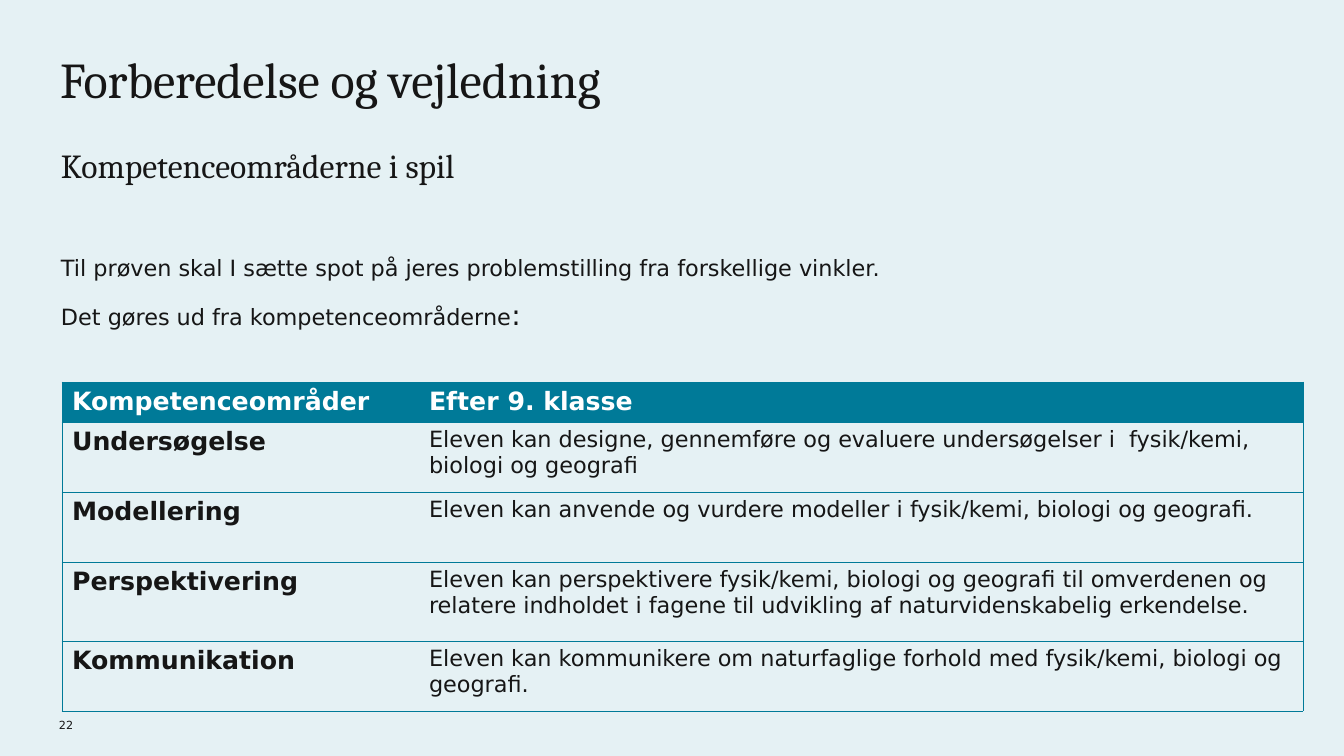
"""Build the slide on preparation and guidance with its table of competence areas."""
from lxml import etree
from pptx import Presentation
from pptx.dml.color import RGBColor
from pptx.enum.text import MSO_ANCHOR, MSO_AUTO_SIZE
from pptx.oxml.ns import qn
from pptx.util import Emu, Pt

TOP, LOW = MSO_ANCHOR.TOP, MSO_ANCHOR.BOTTOM
FIXED = MSO_AUTO_SIZE.NONE
PX = 9071
INK, TEAL, WHITE, PALE = "161616", "007A98", "FFFFFF", "E5F1F4"
SERIF, SANS = "Cambria", "DejaVu Sans"
PLAIN = "{2D5ABB26-0587-4C30-8999-92F81FD0307C}"


def add_run(para, text, size, face=SANS, color=INK, bold=False):
    run = para.add_run()
    run.text = text
    font = run.font
    font.size, font.name, font.bold = Pt(size), face, bold
    font.color.rgb = RGBColor.from_string(color)


def set_box(shape, left, top, width, height, anchor=TOP):
    shape.left, shape.top = Emu(left * PX), Emu(top * PX)
    shape.width, shape.height = Emu(width * PX), Emu(height * PX)
    frame = shape.text_frame
    frame.margin_left = frame.margin_right = 0
    frame.margin_top = frame.margin_bottom = 0
    frame.word_wrap, frame.auto_size = True, FIXED
    frame.vertical_anchor = anchor
    return frame


deck = Presentation()
deck.slide_width, deck.slide_height = Emu(1344 * PX), Emu(756 * PX)
slide = deck.slides.add_slide(deck.slide_layouts[1])
back = slide.background.fill
back.solid()
back.fore_color.rgb = RGBColor.from_string(PALE)

title = set_box(slide.shapes.title, 60, 59, 1020, 103).paragraphs[0]
title.alignment = 1
title.line_spacing = 0.83
add_run(title, "Forberedelse og vejledning", 35.8, SERIF)

body = set_box(slide.placeholders[1], 61, 145, 1200, 531)
lines = [
    (0, [("Kompetenceområderne i spil", 24, SERIF)]),
    (49, [("Til prøven skal I sætte spot på jeres problemstilling "
           "fra forskellige vinkler.", 16, SANS)]),
    (12, [("Det gøres ud fra kompetenceområderne", 16, SANS), (":", 20, SANS)]),
]
for i, (gap, runs) in enumerate(lines):
    para = body.add_paragraph() if i else body.paragraphs[0]
    props = para._p.get_or_add_pPr()
    props.set("marL", "0")
    props.set("indent", "0")
    etree.SubElement(props, qn("a:buNone"))
    para.space_before = Pt(gap)
    for text, size, face in runs:
        add_run(para, text, size, face)

page = set_box(slide.shapes.add_textbox(0, 0, 0, 0), 59, 712, 30, 20, LOW)
add_run(page.paragraphs[0], "22", 8)

rows = [
    (40, "Kompetenceområder", "Efter 9. klasse"),
    (70, "Undersøgelse",
     "Eleven kan designe, gennemføre og evaluere undersøgelser i  fysik/kemi, "
     "biologi og geografi"),
    (70, "Modellering",
     "Eleven kan anvende og vurdere modeller i fysik/kemi, biologi og geografi."),
    (79, "Perspektivering",
     "Eleven kan perspektivere fysik/kemi, biologi og geografi til omverdenen og "
     "relatere indholdet i fagene til udvikling af naturvidenskabelig erkendelse."),
    (70, "Kommunikation",
     "Eleven kan kommunikere om naturfaglige forhold med fysik/kemi, biologi og "
     "geografi."),
]
widths = [357, 884]
high = sum(row[0] for row in rows)
table = slide.shapes.add_table(len(rows), 2, Emu(62 * PX), Emu(382 * PX),
                               Emu(sum(widths) * PX), Emu(high * PX)).table
table.horz_banding = False
table._tbl.tblPr[0].text = PLAIN
for col, width in zip(table.columns, widths):
    col.width = Emu(width * PX)

for r, (tall, *texts) in enumerate(rows):
    table.rows[r].height = Emu(tall * PX)
    for c, text in enumerate(texts):
        cell = table.cell(r, c)
        head = r == 0
        strong = head or c == 0
        add_run(cell.text_frame.paragraphs[0], text, 18 if strong else 16,
                color=WHITE if head else INK, bold=strong)
        props = cell._tc.get_or_add_tcPr()
        for side in ("lnR" if c else "lnL", "lnT", "lnB"):
            edge = etree.SubElement(props, qn("a:" + side), w=str(Pt(0.5)))
            fill = etree.SubElement(edge, qn("a:solidFill"))
            etree.SubElement(fill, qn("a:srgbClr"), val=TEAL)
        if head:
            cell.fill.solid()
            cell.fill.fore_color.rgb = RGBColor.from_string(TEAL)
        else:
            cell.fill.background()

deck.save("out.pptx")
